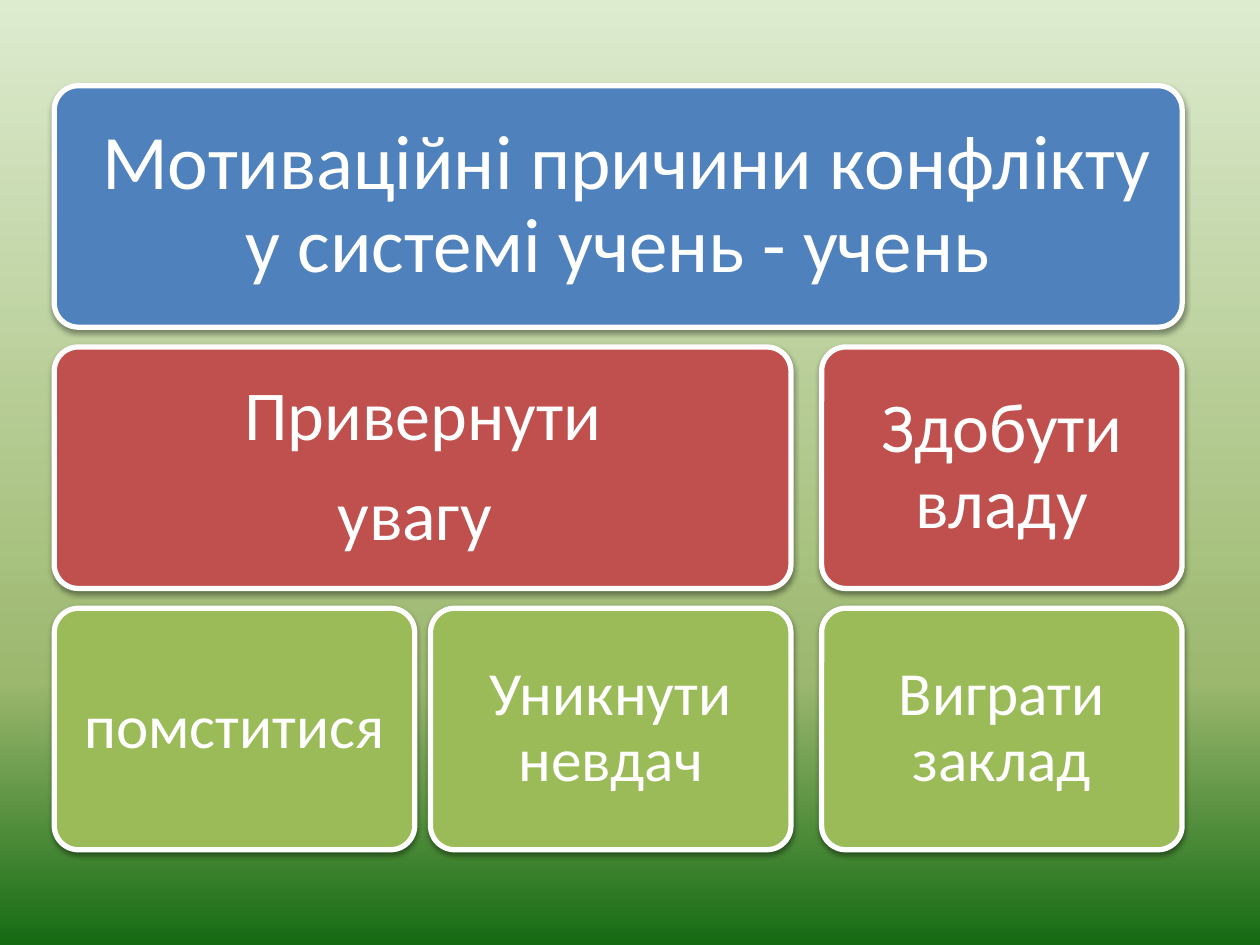
from lxml import etree
from pptx import Presentation
from pptx.dml.color import RGBColor
from pptx.enum.shapes import MSO_SHAPE
from pptx.enum.text import MSO_ANCHOR, PP_ALIGN
from pptx.oxml import parse_xml
from pptx.oxml.ns import qn
from pptx.util import Pt

ROUNDED = MSO_SHAPE.ROUNDED_RECTANGLE
MIDDLE = MSO_ANCHOR.MIDDLE
CENTER = PP_ALIGN.CENTER
NS = ('xmlns:a="http://schemas.openxmlformats.org/drawingml/2006/main" '
      'xmlns:p="http://schemas.openxmlformats.org/presentationml/2006/main"')

BACKGROUND = [(0, "DDEBCF"), (72, "9CB86E"), (100, "156B13")]
LEVELS = [("4F81BD", 44), ("C0504D", 40), ("9BBB59", 35)]
BLOCKS = [
    (0, 0, 2, [" Мотиваційні причини конфлікту у системі учень - учень"]),
    (1, 0, 1, ["Привернути", "увагу "]),
    (2, 0, 0, ["помститися"]),
    (2, 1, 1, ["Уникнути невдач"]),
    (1, 2, 2, ["Здобути владу"]),
    (2, 2, 2, ["Виграти заклад"]),
]
COLUMNS = [31, 246, 469.5]
COLUMN_W = 206
TOP, ROW_STEP, ROW_H = 49, 149.3, 138


def rgb(value):
    return RGBColor.from_string(value)


def set_background(s):
    stops = "".join(f'<a:gs pos="{pos * 1000}"><a:srgbClr val="{color}"/></a:gs>'
                    for pos, color in BACKGROUND)
    s.element.cSld.insert(0, parse_xml(
        f'<p:bg {NS}><p:bgPr><a:gradFill rotWithShape="1"><a:gsLst>{stops}</a:gsLst>'
        '<a:lin ang="5400000" scaled="0"/></a:gradFill><a:effectLst/></p:bgPr></p:bg>'))


def add_shadow(sp):
    sp.shadow.inherit = False
    effects = sp.element.spPr.find(qn("a:effectLst"))
    shadow = etree.SubElement(effects, qn("a:outerShdw"), blurRad=str(Pt(3.1)),
                              dist=str(Pt(1.6)), dir="5400000", rotWithShape="0")
    color = etree.SubElement(shadow, qn("a:srgbClr"), val="000000")
    etree.SubElement(color, qn("a:alpha"), val="38000")


def add_block(s, level, first, last, lines):
    fill, size = LEVELS[level]
    left = COLUMNS[first]
    width = COLUMNS[last] + COLUMN_W - left
    sp = s.shapes.add_shape(ROUNDED, Pt(left), Pt(TOP + level * ROW_STEP),
                            Pt(width), Pt(ROW_H))
    sp.adjustments[0] = 0.1
    sp.fill.solid()
    sp.fill.fore_color.rgb = rgb(fill)
    sp.line.color.rgb = rgb("FFFFFF")
    sp.line.width = Pt(3)
    add_shadow(sp)

    tf = sp.text_frame
    inset = Pt(size * 0.3)
    frame = {"word_wrap": True, "vertical_anchor": MIDDLE, "margin_left": inset,
             "margin_right": inset, "margin_top": inset, "margin_bottom": inset}
    for name, value in frame.items():
        setattr(tf, name, value)
    for i, line in enumerate(lines):
        p = tf.paragraphs[0] if i == 0 else tf.add_paragraph()
        p.alignment = CENTER
        p.line_spacing = 0.9
        if i < len(lines) - 1:
            p.space_after = Pt(size * 0.35)
        r = p.add_run()
        r.text = line
        for name, value in {"name": "Calibri", "size": Pt(size)}.items():
            setattr(r.font, name, value)
        r.font.color.rgb = rgb("FFFFFF")


def main():
    """Build the slide on motives of conflict between pupils."""
    prs = Presentation()
    prs.slide_width, prs.slide_height = Pt(720), Pt(540)
    s = prs.slides.add_slide(prs.slide_layouts[6])
    set_background(s)
    for block in BLOCKS:
        add_block(s, *block)
    prs.save("out.pptx")


if __name__ == "__main__":
    main()
